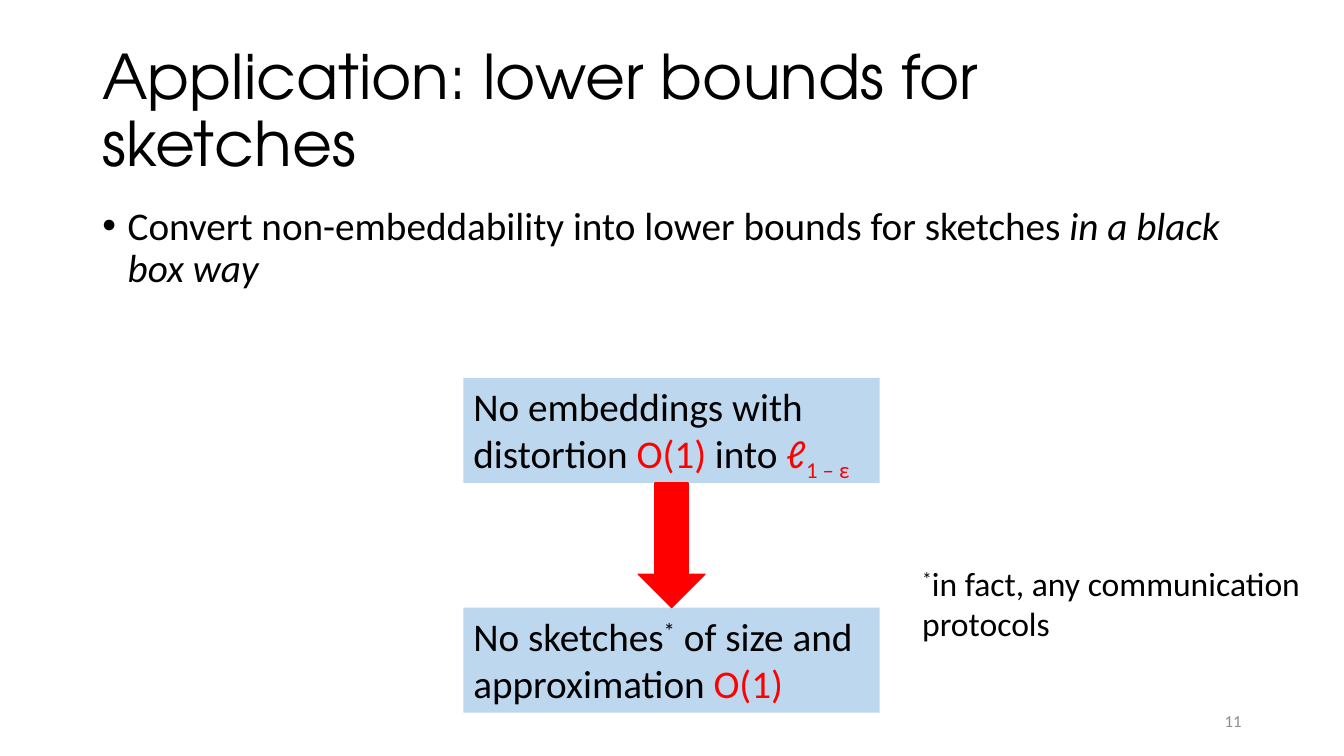
from lxml import etree
from pptx import Presentation
from pptx.dml.color import RGBColor
from pptx.enum.shapes import MSO_SHAPE as SHAPE
from pptx.enum.text import MSO_ANCHOR as ANCHOR, PP_ALIGN as ALIGN
from pptx.oxml.ns import qn
from pptx.util import Cm, Pt

BLACK, RED, BLUE, GREY = "000000", "FF0000", "BDD7EE", "8C8C8C"


def rgb(color):
    return RGBColor.from_string(color)


def write(s, runs, size=28, font="Calibri", color=BLACK, anchor=ANCHOR.TOP,
          align=ALIGN.LEFT, spacing=1.0):
    """Fill s with runs given as (text, format) and return the paragraph."""
    tf = s.text_frame
    tf.word_wrap = True
    tf.vertical_anchor = anchor
    p = tf.paragraphs[0]
    p.alignment = align
    p.line_spacing = spacing
    for text, fmt in runs:
        r = p.add_run()
        r.text = text
        r.font.size = Pt(size)
        r.font.name = font
        r.font.color.rgb = rgb(fmt.get("color", color))
        if fmt.get("italic"):
            r.font.italic = True
        if "baseline" in fmt:
            r.font._element.set("baseline", str(fmt["baseline"] * 1000))
    return p


prs = Presentation()
prs.slide_width, prs.slide_height = Cm(33.87), Cm(19.05)
slide = prs.slides.add_slide(prs.slide_layouts[6])
shapes = slide.shapes

# Title
title = shapes.add_textbox(Cm(2.33), Cm(1.01), Cm(29.21), Cm(3.68))
write(title, [("Application: lower bounds for sketches", {})], size=44,
      font="TeX Gyre Adventor", anchor=ANCHOR.MIDDLE, spacing=0.9)

# Bullet
body = shapes.add_textbox(Cm(2.33), Cm(5.07), Cm(29.21), Cm(4.45))
p = write(body, [
    ("Convert non-embeddability into lower bounds for sketches ", {}),
    ("in a black box way", {"italic": True}),
], spacing=0.9)
p.space_before = Pt(10)
pPr = p._p.get_or_add_pPr()
pPr.set("marL", str(Cm(0.64)))
pPr.set("indent", str(Cm(-0.64)))
etree.SubElement(pPr, qn("a:buFont")).set("typeface", "Arial")
etree.SubElement(pPr, qn("a:buChar")).set("char", "•")

# Slide number
number = shapes.add_textbox(Cm(23.92), Cm(17.66), Cm(7.62), Cm(1.01))
write(number, [("11", {})], size=12, color=GREY, anchor=ANCHOR.MIDDLE, align=ALIGN.RIGHT)

# Implication: premise, conclusion and the arrow between them
box_left, box_width, box_height = 11.68, 10.49, 2.65
premise_top, conclusion_top = 9.52, 15.31
statements = [
    (premise_top, [
        ("No embeddings with distortion ", {}),
        ("O(1)", {"color": RED}),
        (" into ", {}),
        ("ℓ", {"color": RED}),
        ("1 – ε", {"color": RED, "baseline": -25}),
    ]),
    (conclusion_top, [
        ("No sketches", {}),
        ("*", {"baseline": 30}),
        (" of size and approximation ", {}),
        ("O(1)", {"color": RED}),
    ]),
]
for top, runs in statements:
    box = shapes.add_shape(SHAPE.RECTANGLE, Cm(box_left), Cm(top), Cm(box_width), Cm(box_height))
    box.shadow.inherit = False
    box.fill.solid()
    box.fill.fore_color.rgb = rgb(BLUE)
    box.line.fill.background()
    write(box, runs)

arrow_width = 1.68
arrow_top = premise_top + box_height
arrow = shapes.add_shape(SHAPE.DOWN_ARROW, Cm(box_left + (box_width - arrow_width) / 2),
                         Cm(arrow_top), Cm(arrow_width), Cm(conclusion_top - arrow_top))
arrow.shadow.inherit = False
arrow.fill.solid()
arrow.fill.fore_color.rgb = rgb(RED)
arrow.line.color.rgb = rgb(RED)
arrow.line.width = Pt(1)

# Footnote
footnote = shapes.add_textbox(Cm(22.99), Cm(14.05), Cm(10.87), Cm(2.31))
write(footnote, [("*", {"baseline": 30}), ("in fact, any communication protocols", {})], size=24)

prs.save("out.pptx")
